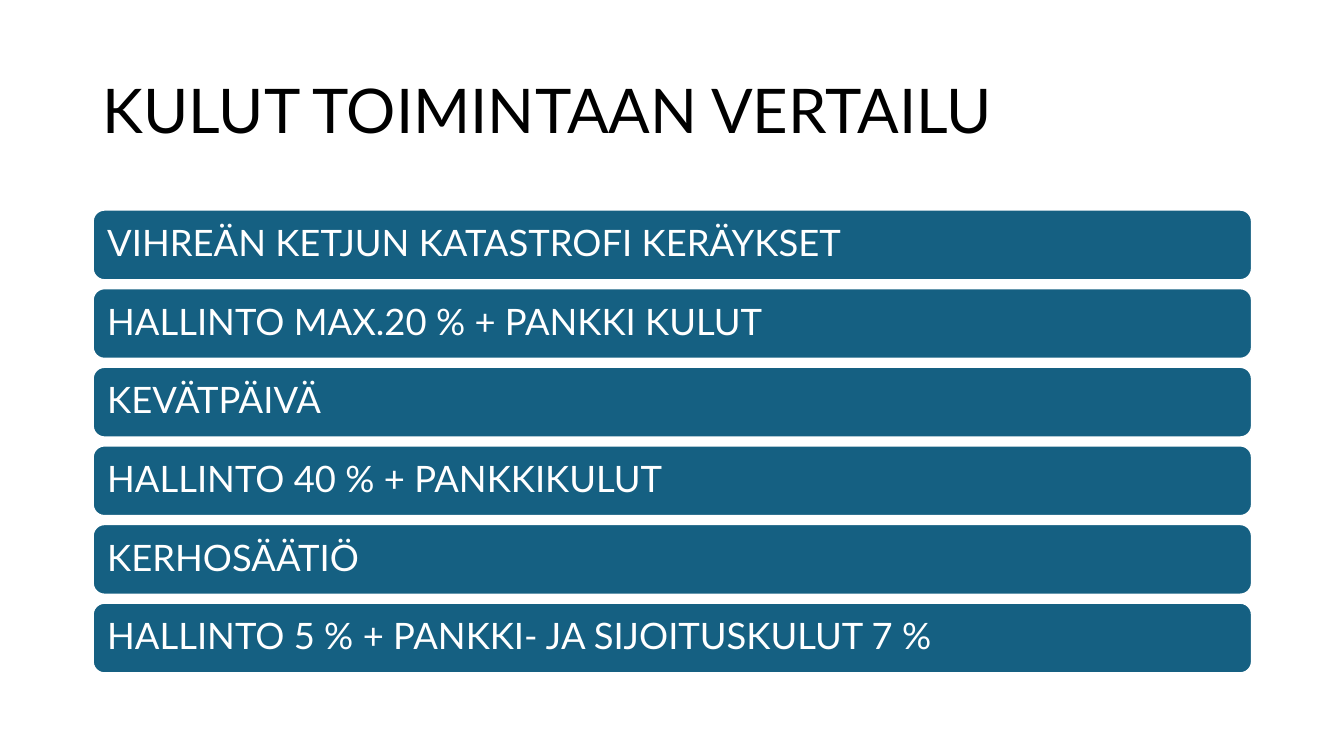
from dataclasses import dataclass

from pptx import Presentation
from pptx.dml.color import RGBColor
from pptx.enum.shapes import MSO_SHAPE
from pptx.enum.text import MSO_ANCHOR, PP_ALIGN
from pptx.shapes.autoshape import Shape
from pptx.slide import Slide
from pptx.util import Inches, Pt

ROUNDED = MSO_SHAPE.ROUNDED_RECTANGLE
MIDDLE = MSO_ANCHOR.MIDDLE
LEFT = PP_ALIGN.LEFT

COLORS = {"title": "000000", "bar": "156082", "white": "FFFFFF"}
FONT = "Lato"
SLIDE_WIDTH, SLIDE_HEIGHT = Inches(13.33), Inches(7.5)

# Percent of the slide's width or height
CONTENT_LEFT, CONTENT_WIDTH = 6.9, 86.25
TITLE_TOP, TITLE_HEIGHT = 5.33, 19.33
BARS_TOP, BAR_HEIGHT, BAR_PITCH = 27.73, 9.33, 10.4

TITLE = "KULUT TOIMINTAAN VERTAILU"
BAR_TEXTS = (
    "VIHREÄN KETJUN KATASTROFI KERÄYKSET",
    "HALLINTO MAX.20 % + PANKKI KULUT",
    "KEVÄTPÄIVÄ",
    "HALLINTO 40 % + PANKKIKULUT",
    "KERHOSÄÄTIÖ",
    "HALLINTO 5 % + PANKKI- JA SIJOITUSKULUT 7 %",
)


@dataclass(frozen=True)
class Band:
    """A full-width strip of text, placed in percent of the slide's height."""
    text: str
    top: float
    height: float
    size: int
    color: str
    inset: float

    def box(self) -> tuple[int, int, int, int]:
        return (
            round(SLIDE_WIDTH * CONTENT_LEFT / 100),
            round(SLIDE_HEIGHT * self.top / 100),
            round(SLIDE_WIDTH * CONTENT_WIDTH / 100),
            round(SLIDE_HEIGHT * self.height / 100),
        )


def write_text(shape: Shape, band: Band) -> None:
    text_frame = shape.text_frame
    text_frame.text = band.text
    text_frame.word_wrap = True
    text_frame.vertical_anchor = MIDDLE
    text_frame.margin_left = text_frame.margin_right = Inches(band.inset)
    paragraph = text_frame.paragraphs[0]
    paragraph.alignment = LEFT
    paragraph.line_spacing = 0.9
    font = paragraph.runs[0].font
    font.name = FONT
    font.size = Pt(band.size)
    font.color.rgb = RGBColor.from_string(COLORS[band.color])


def add_title(slide: Slide, band: Band) -> None:
    write_text(slide.shapes.add_textbox(*band.box()), band)


def add_bar(slide: Slide, band: Band) -> None:
    shape = slide.shapes.add_shape(ROUNDED, *band.box())
    shape.shadow.inherit = False
    shape.fill.solid()
    shape.fill.fore_color.rgb = RGBColor.from_string(COLORS["bar"])
    shape.line.color.rgb = RGBColor.from_string(COLORS["white"])
    shape.line.width = Pt(1.5)
    write_text(shape, band)


def main() -> None:
    presentation = Presentation()
    presentation.slide_width = SLIDE_WIDTH
    presentation.slide_height = SLIDE_HEIGHT
    slide = presentation.slides.add_slide(presentation.slide_layouts[6])

    add_title(slide, Band(TITLE, TITLE_TOP, TITLE_HEIGHT, 44, "title", 0.1))
    for index, text in enumerate(BAR_TEXTS):
        top = BARS_TOP + index * BAR_PITCH
        add_bar(slide, Band(text, top, BAR_HEIGHT, 26, "white", 0.11))

    presentation.save("out.pptx")


if __name__ == "__main__":
    main()
